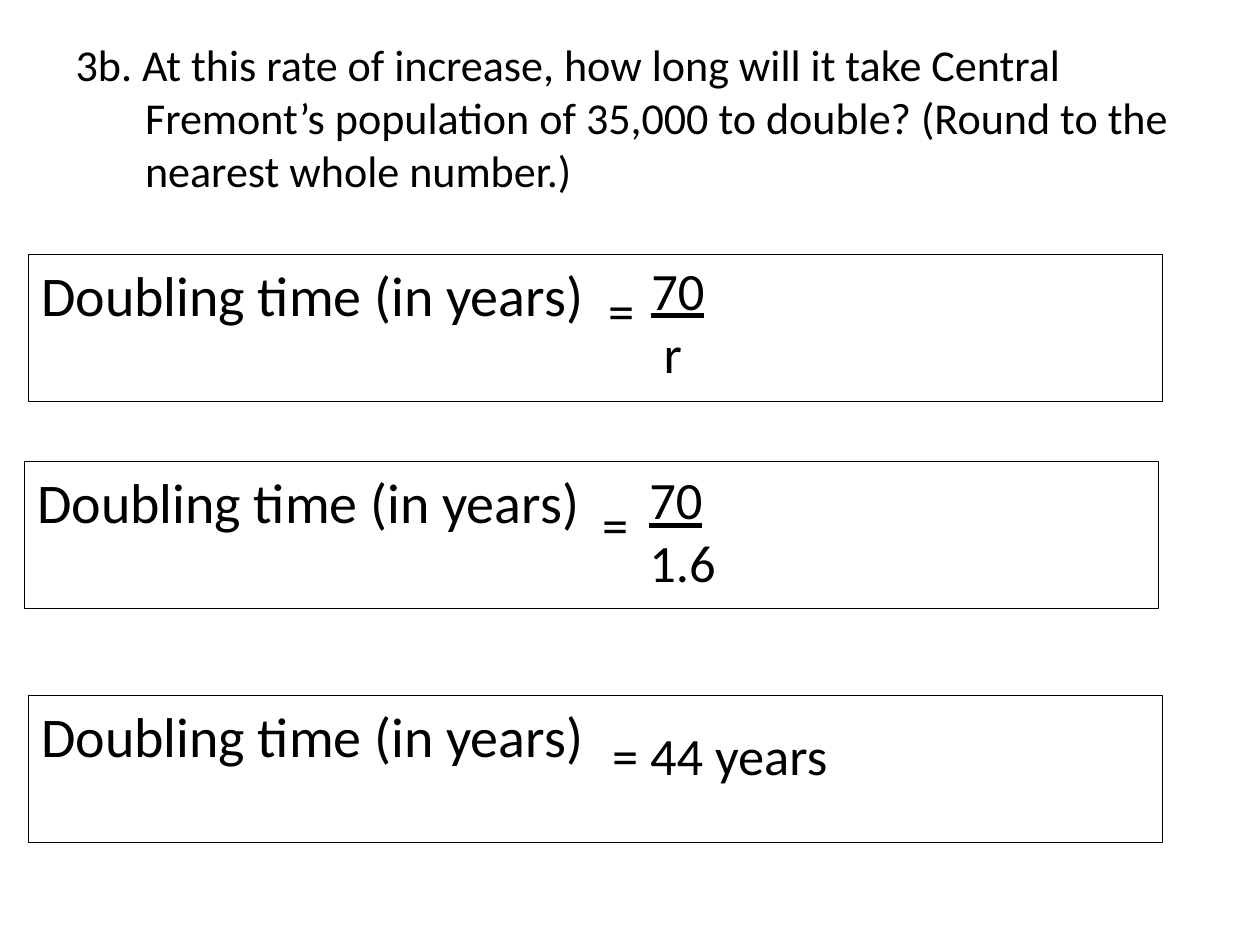
"""Build a slide that works out a population's doubling time in three steps."""
from pptx import Presentation
from pptx.dml.color import RGBColor
from pptx.enum.shapes import MSO_SHAPE as Shape
from pptx.enum.text import MSO_ANCHOR as Anchor, MSO_AUTO_SIZE as AutoSize, PP_ALIGN as Align
from pptx.util import Cm, Pt


def color(value):
    return RGBColor.from_string(value)


class Sheet:
    font = "Calibri"
    ink = "000000"
    title_size, label_size, math_size = 25.2, 32, 30

    def __init__(self, deck):
        self.page = deck.slides.add_slide(deck.slide_layouts[5])

    def style(self, para, size):
        para.alignment = Align.LEFT
        para.font.name = self.font
        para.font.size = Pt(size)
        para.font.color.rgb = color(self.ink)

    def title(self, lines, left, top, width, height, hang):
        box = self.page.shapes.title
        box.left, box.top, box.width, box.height = map(Cm, (left, top, width, height))
        frame = box.text_frame
        frame.auto_size = AutoSize.NONE
        frame.vertical_anchor = Anchor.MIDDLE
        frame.text = "\v".join(lines)
        para = frame.paragraphs[0]
        self.style(para, self.title_size)
        properties = para._p.get_or_add_pPr()
        properties.set("marL", str(Cm(hang)))
        properties.set("indent", str(-Cm(hang)))

    def panel(self, group, text, left, top, width=22.86, height=2.97):
        box = group.shapes.add_shape(Shape.RECTANGLE, *map(Cm, (left, top, width, height)))
        box.shadow.inherit = False
        box.fill.background()
        box.line.color.rgb = color(self.ink)
        box.line.width = Pt(0.75)
        frame = box.text_frame
        frame.vertical_anchor = Anchor.TOP
        frame.text = text
        self.style(frame.paragraphs[0], self.label_size)

    def math(self, group, text, left, top, width, height=1.55):
        box = group.shapes.add_textbox(*map(Cm, (left, top, width, height)))
        frame = box.text_frame
        frame.word_wrap = True
        frame.text = text
        for para in frame.paragraphs:
            self.style(para, self.math_size)
        return frame.paragraphs

    def fraction(self, group, top_text, bottom_text, left, top, shift):
        over, under = self.math(group, f"{top_text}\n{bottom_text}", left, top, 2, 2.82)
        over.font.underline = True
        under._p.get_or_add_pPr().set("marL", str(Cm(shift)))

    def step(self, left, top):
        group = self.page.shapes.add_group_shape()
        self.panel(group, "Doubling time (in years)", left, top)
        return group


def main():
    deck = Presentation()
    deck.slide_width, deck.slide_height = Cm(25.4), Cm(19.05)
    sheet = Sheet(deck)
    sheet.title(
        ["3b. At this rate of increase, how long will it take Central",
         "Fremont’s population of 35,000 to double? (Round to the",
         "nearest whole number.)"],
        1.27, 0.76, 22.86, 3.18, 1.4)

    formula = sheet.step(0.58, 5.13)
    sheet.fraction(formula, "70", "r", 12.88, 5.08, 0.25)
    sheet.math(formula, "=", 12.01, 5.49, 1.07)

    values = sheet.step(0.5, 9.3)
    sheet.fraction(values, "70", "1.6", 12.84, 9.3, 0)
    sheet.math(values, "=", 11.89, 9.8, 1.07)

    answer = sheet.step(0.58, 14.02)
    sheet.math(answer, "= 44 years", 12.09, 14.45, 7.72)
    deck.save("out.pptx")


if __name__ == "__main__":
    main()
